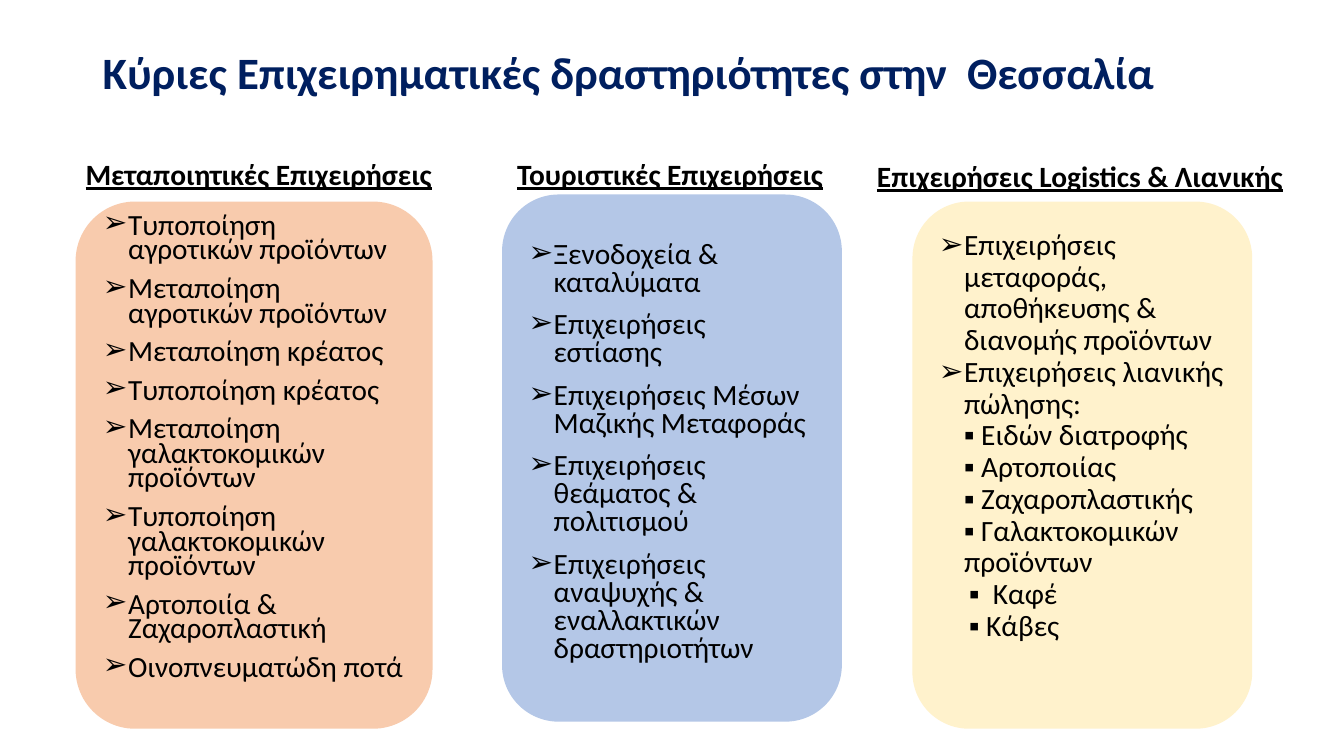
from pptx import Presentation
from pptx import util as u
from pptx.dml.color import RGBColor
from pptx.enum import shapes, text
from pptx.oxml.ns import qn
from lxml import etree

NAVY = RGBColor(0x00, 0x1F, 0x5F)
BLACK = RGBColor(0x00, 0x00, 0x00)
PEACH = RGBColor(0xF8, 0xCB, 0xAD)
BLUE = RGBColor(0xB4, 0xC7, 0xE7)
CREAM = RGBColor(0xFF, 0xF2, 0xCC)

TITLE = "Κύριες Επιχειρηματικές δραστηριότητες στην  Θεσσαλία"
MAKERS = [
    "Τυποποίηση αγροτικών προϊόντων",
    "Μεταποίηση αγροτικών προϊόντων",
    "Μεταποίηση κρέατος",
    "Τυποποίηση κρέατος",
    "Μεταποίηση γαλακτοκομικών προϊόντων",
    "Τυποποίηση γαλακτοκομικών προϊόντων",
    "Αρτοποιία & Ζαχαροπλαστική",
    "Οινοπνευματώδη ποτά",
]
TOURISM = [
    "Ξενοδοχεία & καταλύματα",
    "Επιχειρήσεις εστίασης",
    "Επιχειρήσεις Μέσων Μαζικής Μεταφοράς",
    "Επιχειρήσεις θεάματος & πολιτισμού",
    "Επιχειρήσεις αναψυχής & εναλλακτικών δραστηριοτήτων",
]
RETAIL = [
    "Επιχειρήσεις μεταφοράς, αποθήκευσης & διανομής προϊόντων",
    "Επιχειρήσεις λιανικής πώλησης:\n▪ Ειδών διατροφής\n▪ Αρτοποιίας\n"
    "▪ Ζαχαροπλαστικής\n▪ Γαλακτοκομικών προϊόντων",
    "▪  Καφέ\n▪ Κάβες",
]

# Heading box, card box (left, top, width, height), then the card's format
COLUMNS = [
    dict(head="Μεταποιητικές Επιχειρήσεις", spot=(0.75, 1.5, 3.67, 0.45),
         card=(0.75, 2, 3.54, 5.23), fill=PEACH, items=MAKERS,
         size=20.9, line=0.7, gap=10, pad=(0.05, 0.37)),
    dict(head="Τουριστικές Επιχειρήσεις", spot=(5.03, 1.5, 3.26, 0.45),
         card=(4.98, 1.93, 3.37, 5.23), fill=BLUE, items=TOURISM,
         size=21, line=0.8, gap=10, pad=(0.47, 0.57)),
    dict(head="Επιχειρήσεις Logistics & Λιανικής", spot=(8.6, 1.52, 4.27, 0.45),
         card=(9.05, 2, 3.37, 5.23), fill=CREAM, items=RETAIL,
         size=21, line=0.9, gap=0, pad=(0.05, 0.62)),
]


def inches(box):
    return [u.Inches(v) for v in box]


def style(para, size, **more):
    look = dict(name="Calibri", size=u.Pt(size), **more)
    color = look.pop("color", BLACK)
    for run in para.runs:
        for key, val in look.items():
            setattr(run.font, key, val)
        run.font.color.rgb = color


def indent(para, left, hang, mark=None):
    """Set the paragraph margins, with a bullet if a mark is given."""
    props = para._p.get_or_add_pPr()
    props.set("marL", str(u.Inches(left)))
    props.set("indent", str(u.Inches(hang)))
    if mark:
        etree.SubElement(props, qn("a:buFont"), typeface="Wingdings")
        props[-1].set("typeface", "Arial")
        etree.SubElement(props, qn("a:buChar"), char=mark)
    else:
        etree.SubElement(props, qn("a:buNone"))


def label(slide, box, words, size, **more):
    frame = slide.shapes.add_textbox(*inches(box)).text_frame
    frame.word_wrap = False
    para = frame.paragraphs[0]
    para.text = words
    style(para, size, bold=True, **more)
    return frame


def card(slide, col):
    shape = slide.shapes.add_shape(
        shapes.MSO_SHAPE.ROUNDED_RECTANGLE, *inches(col["card"]))
    shape.shadow.inherit = False
    shape.fill.solid()
    shape.fill.fore_color.rgb = col["fill"]
    shape.line.fill.background()
    frame = shape.text_frame
    frame.word_wrap = True
    frame.vertical_anchor = text.MSO_ANCHOR.MIDDLE
    frame.margin_top, frame.margin_bottom = inches(col["pad"])
    for i, item in enumerate(col["items"]):
        para = frame.paragraphs[0] if i == 0 else frame.add_paragraph()
        para.text = item
        if item.startswith("▪"):
            indent(para, 0.3, 0)
        else:
            indent(para, 0.25, -0.25, "➢")
        para.alignment = text.PP_ALIGN.LEFT
        para.line_spacing = col["line"]
        para.space_before = u.Pt(col["gap"] if i else 0)
        style(para, col["size"])


def main():
    deck = Presentation()
    deck.slide_width, deck.slide_height = inches((13.33, 7.5))
    slide = deck.slides.add_slide(deck.slide_layouts[6])
    title = label(slide, (0.92, 0.4, 11.5, 0.69), TITLE, 32, color=NAVY)
    title.word_wrap = True
    title.vertical_anchor = text.MSO_ANCHOR.MIDDLE
    title.paragraphs[0].line_spacing = 0.9
    for col in COLUMNS:
        card(slide, col)
        label(slide, col["spot"], col["head"], 21, underline=True)
    deck.save("out.pptx")


if __name__ == "__main__":
    main()
